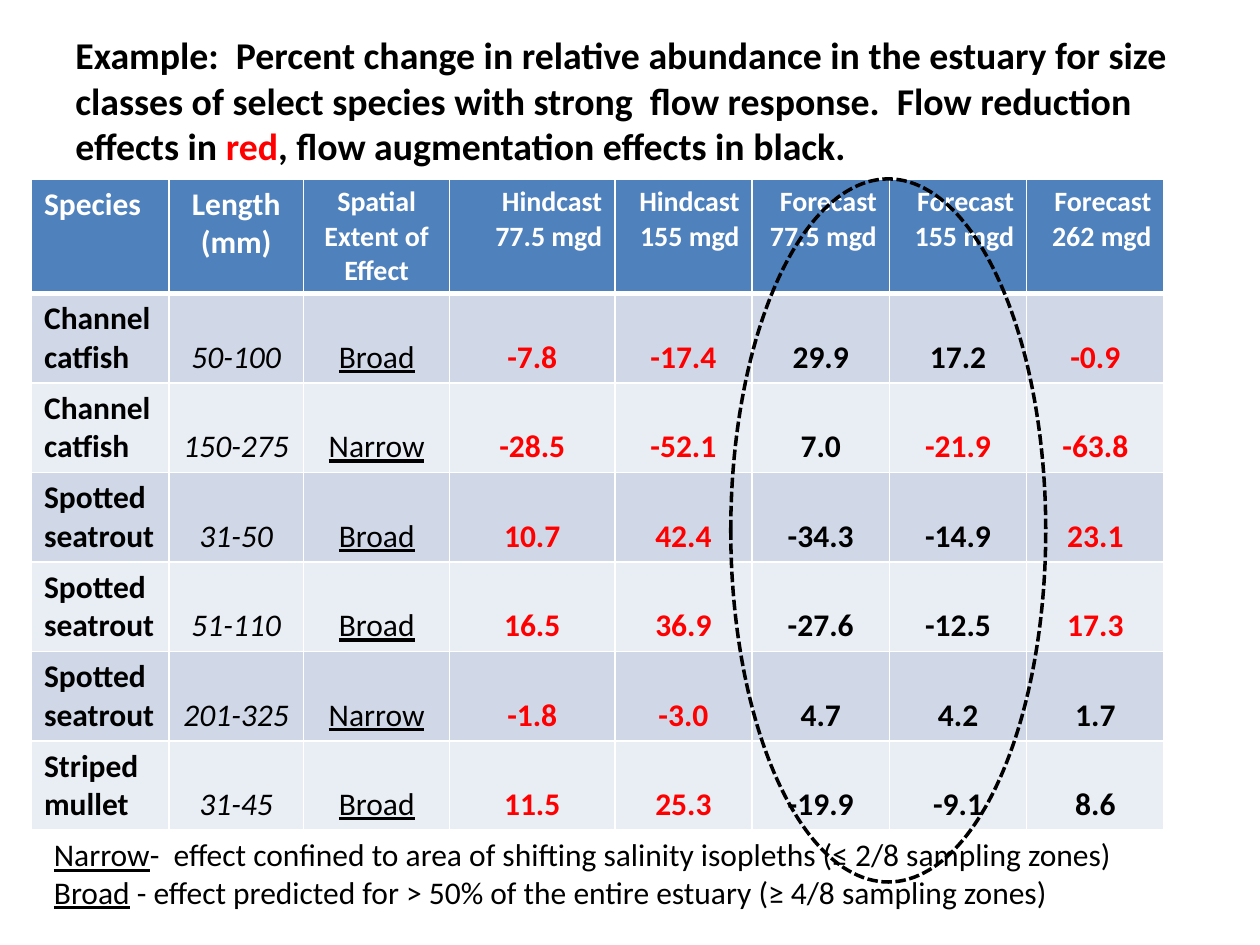
from lxml.etree import SubElement as Sub
from pptx import Presentation
from pptx.dml.color import RGBColor as Rgb
from pptx.enum.dml import MSO_LINE as Dash
from pptx.enum.shapes import MSO_SHAPE as Shape
from pptx.enum.text import MSO_ANCHOR as Anchor, PP_ALIGN as Align
from pptx.oxml.ns import qn
from pptx.util import Inches, Pt

HUES = {
    "black": "000000", "red": "FF0000", "white": "FFFFFF",
    "head": "4F81BD", "dark": "D0D8E8", "light": "E9EDF4",
}
WIDTHS = [1.09, 1.07, 1.16, 1.31, 1.09, 1.09, 1.09, 1.09]
HEADS = [
    ("Species", 18, Align.LEFT),
    ("Length (mm)", 18, Align.CENTER),
    ("Spatial Extent of Effect", 16, Align.CENTER),
    ("Hindcast 77.5 mgd", 16, Align.RIGHT),
    ("Hindcast 155 mgd", 16, Align.RIGHT),
    ("Forecast 77.5 mgd", 16, Align.RIGHT),
    ("Forecast 155 mgd", 16, Align.RIGHT),
    ("Forecast 262 mgd", 16, Align.RIGHT),
]
ROWS = [
    ("Channel catfish", "50-100", "Broad", "-7.8", "-17.4", "29.9", "17.2", "-0.9"),
    ("Channel catfish", "150-275", "Narrow", "-28.5", "-52.1", "7.0", "-21.9", "-63.8"),
    ("Spotted seatrout", "31-50", "Broad", "10.7", "42.4", "-34.3", "-14.9", "23.1"),
    ("Spotted seatrout", "51-110", "Broad", "16.5", "36.9", "-27.6", "-12.5", "17.3"),
    ("Spotted seatrout", "201-325", "Narrow", "-1.8", "-3.0", "4.7", "4.2", "1.7"),
    ("Striped mullet", "31-45", "Broad", "11.5", "25.3", "-19.9", "-9.1", "8.6"),
]
REDS = [{3, 4, 7}, {3, 4, 6, 7}, {3, 4, 7}, {3, 4, 7}, {3, 4}, {3, 4}]
STYLES = [{"bold": True}, {"italic": True}, {"underline": True}] + [{"bold": True}] * 5


def hue(name):
    return Rgb.from_string(HUES[name])


def add_run(para, text, size, color="black", **style):
    run = para.add_run()
    run.text = text
    for key, value in {"name": "Calibri", "size": Pt(size), **style}.items():
        setattr(run.font, key, value)
    run.font.color.rgb = hue(color)


def add_box(slide, box, anchor):
    frame = slide.shapes.add_textbox(*map(Inches, box)).text_frame
    for key, value in {"word_wrap": True, "vertical_anchor": anchor}.items():
        setattr(frame, key, value)
    return frame


def add_title(slide, box):
    para = add_box(slide, box, Anchor.MIDDLE).paragraphs[0]
    parts = [
        ("Example:  Percent change in relative abundance in the estuary for size "
         "classes of select species with strong  flow response.  Flow reduction "
         "effects in ", "black"),
        ("red", "red"),
        (", flow augmentation effects in black.", "black"),
    ]
    for text, color in parts:
        add_run(para, text, 21.6, color, bold=True)


def add_edges(cell, top, base):
    props = cell._tc.get_or_add_tcPr()
    for side, width in {"L": 1, "R": 1, "T": top, "B": base}.items():
        line = Sub(props, qn(f"a:ln{side}"), w=str(Pt(width)))
        fill = Sub(line, qn("a:solidFill"))
        Sub(fill, qn("a:srgbClr"), val=HUES["white"])


def fill_cell(cell, back, anchor, align, edges):
    add_edges(cell, *edges)
    cell.fill.solid()
    cell.fill.fore_color.rgb = hue(back)
    cell.vertical_anchor = anchor
    para = cell.text_frame.paragraphs[0]
    para.alignment = align
    return para


def add_grid(slide, box):
    count = len(ROWS) + 1
    grid = slide.shapes.add_table(count, len(WIDTHS), *map(Inches, box)).table
    for col, width in zip(grid.columns, WIDTHS):
        col.width = Inches(width)
    top = 0.91
    for num, row in enumerate(grid.rows):
        row.height = Inches((box[3] - top) / len(ROWS) if num else top)
    for col, (text, size, align) in enumerate(HEADS):
        para = fill_cell(grid.cell(0, col), "head", Anchor.TOP, align, (1, 3))
        add_run(para, text, size, "white", bold=True)
    for num, (row, reds) in enumerate(zip(ROWS, REDS)):
        back = "light" if num % 2 else "dark"
        edges = (1 if num else 3, 1)
        for col, (text, style) in enumerate(zip(row, STYLES)):
            align = Align.CENTER if col else Align.LEFT
            para = fill_cell(grid.cell(num + 1, col), back, Anchor.BOTTOM, align, edges)
            add_run(para, text, 18, "red" if col in reds else "black", **style)


def add_ring(slide, box):
    ring = slide.shapes.add_shape(Shape.OVAL, *map(Inches, box))
    ring.shadow.inherit = False
    ring.fill.background()
    ring.line.color.rgb = hue("black")
    for key, value in {"width": Pt(2), "dash_style": Dash.SQUARE_DOT}.items():
        setattr(ring.line, key, value)


def add_notes(slide, box):
    frame = add_box(slide, box, Anchor.TOP)
    notes = [
        ("Narrow", "-  effect confined to area of shifting salinity isopleths (≤ 2/8 sampling zones)"),
        ("Broad", " - effect predicted for > 50% of the entire estuary (≥ 4/8 sampling zones)"),
    ]
    for num, (term, text) in enumerate(notes):
        para = frame.add_paragraph() if num else frame.paragraphs[0]
        add_run(para, term, 18, underline=True)
        add_run(para, text, 18)


def main():
    deck = Presentation()
    deck.slide_width, deck.slide_height = Inches(10), Inches(7.5)
    slide = deck.slides.add_slide(deck.slide_layouts[6])
    add_title(slide, (0.5, 0.17, 9, 1.25))
    add_grid(slide, (0.25, 1.42, 9, 5.17))
    add_ring(slide, (5.8, 1.42, 2.5, 5.58))
    add_notes(slide, (0.33, 6.58, 9, 0.71))
    deck.save("out.pptx")


if __name__ == "__main__":
    main()
